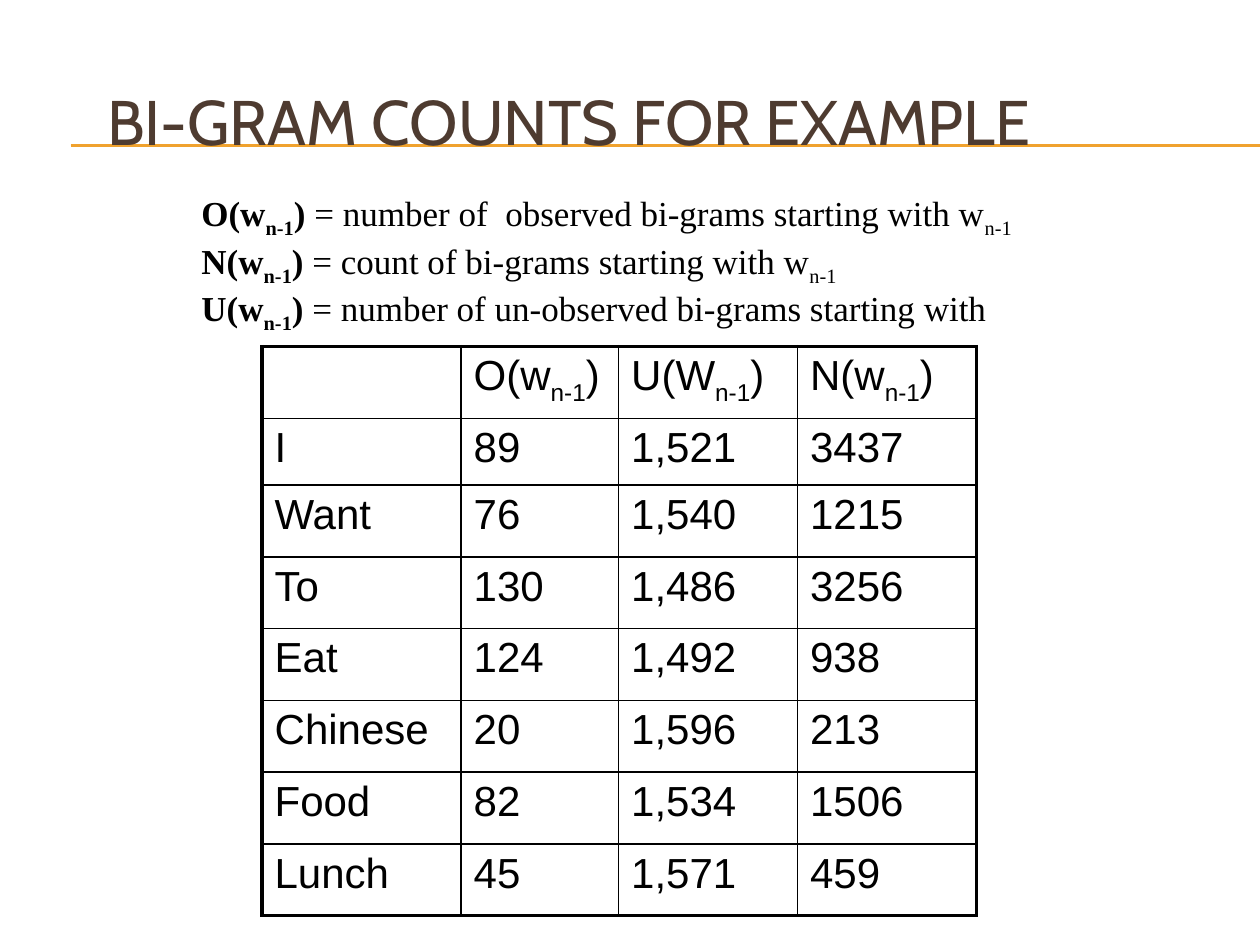
from lxml import etree
from pptx import Presentation
from pptx import util as u
from pptx.dml.color import RGBColor
from pptx.enum import text
from pptx.oxml.ns import qn

INK = {"gold": "F0A22E", "brown": "4E3B30", "black": "000000"}


class Deck:
    def __init__(self, wide, high):
        self.prs = Presentation()
        self.prs.slide_width = u.Inches(wide)
        self.prs.slide_height = u.Inches(high)
        self.slide = self.prs.slides.add_slide(self.prs.slide_layouts[5])

    def run(self, para, words, face, size, ink="black", bold=False, sub=False):
        run = para.add_run()
        run.text = words
        font = run.font
        font.name, font.size, font.bold = face, u.Pt(size), bold
        font.color.rgb = RGBColor.from_string(INK[ink])
        if sub:
            font._element.set("baseline", "-25000")

    def mix(self, para, words, face, size, bold=False):
        for i, part in enumerate(words.split("_")):
            if part:
                self.run(para, part, face, size, bold=bold, sub=i % 2 == 1)

    def title(self, words, box):
        shape = self.slide.shapes.title
        shape.left, shape.top, shape.width, shape.height = map(u.Inches, box)
        frame = shape.text_frame
        frame.vertical_anchor = text.MSO_ANCHOR.MIDDLE
        frame.auto_size = text.MSO_AUTO_SIZE.NONE
        para = frame.paragraphs[0]
        para.alignment = text.PP_ALIGN.LEFT
        self.run(para, words, "Cabin", 36, "brown")

    def line(self, left, top, right):
        ends = map(u.Inches, (left, top, right, top))
        rule = self.slide.shapes.add_connector(1, *ends)
        rule.line.color.rgb = RGBColor.from_string(INK["gold"])
        rule.line.width = u.Pt(0.75)
        etree.SubElement(rule._element.spPr, qn("a:effectLst"))
        tree = self.slide.shapes._spTree
        tree.remove(rule._element)
        tree.insert_element_before(rule._element, "p:sp")

    def notes(self, rows, box):
        shape = self.slide.shapes.add_textbox(*map(u.Inches, box))
        frame = shape.text_frame
        frame.word_wrap = False
        frame.auto_size = text.MSO_AUTO_SIZE.SHAPE_TO_FIT_TEXT
        for i, (term, rest) in enumerate(rows):
            para = frame.add_paragraph() if i else frame.paragraphs[0]
            self.mix(para, term, "Times New Roman", 20, True)
            self.mix(para, rest, "Times New Roman", 20)

    def edge(self, cell, side, width):
        props = cell._tc.get_or_add_tcPr()
        line = etree.SubElement(props, qn(f"a:ln{side}"), w=str(u.Pt(width)))
        fill = etree.SubElement(line, qn("a:solidFill"))
        etree.SubElement(fill, qn("a:srgbClr"), val=INK["black"])

    def table(self, rows, box, cols, highs):
        count, wide = len(rows), len(cols)
        frame = self.slide.shapes.add_table(count, wide, *map(u.Inches, box))
        grid = frame.table
        grid.first_row = grid.horz_banding = False
        for col, size in zip(grid.columns, cols):
            col.width = u.Inches(size)
        for row, size in zip(grid.rows, highs):
            row.height = u.Inches(size)
        for r, row in enumerate(rows):
            for c, words in enumerate(row):
                cell = grid.cell(r, c)
                outer = {"L": c == 0, "R": c == wide - 1,
                         "T": r == 0, "B": r == count - 1}
                for side, thick in outer.items():
                    self.edge(cell, side, 2.25 if thick else 1)
                cell.fill.background()
                para = cell.text_frame.paragraphs[0]
                para.font.size = u.Pt(24)
                self.mix(para, words, "Arial", 24)


def main():
    deck = Deck(10, 7.5)
    deck.title("BI-GRAM COUNTS FOR EXAMPLE", (0.75, 0.58, 8.5, 0.75))
    for top in (1.15, 1.16):
        deck.line(0.56, top, 10)
    deck.table([
        ("", "O(w_n-1_)", "U(W_n-1_)", "N(w_n-1_)"),
        ("I", "89", "1,521", "3437"),
        ("Want", "76", "1,540", "1215"),
        ("To", "130", "1,486", "3256"),
        ("Eat", "124", "1,492", "938"),
        ("Chinese", "20", "1,596", "213"),
        ("Food", "82", "1,534", "1506"),
        ("Lunch", "45", "1,571", "459"),
    ], (2.08, 2.75, 5.67, 4.5), (1.58, 1.25, 1.42, 1.42),
        [0.57, 0.53] + [0.57] * 6)
    deck.notes([
        ("O(w_n-1_)", " = number of  observed bi-grams starting with w_n-1"),
        ("N(w_n-1_)", " = count of bi-grams starting with w_n-1"),
        ("U(w_n-1_)", " = number of un-observed bi-grams starting with"),
    ], (1.5, 1.47, 6.74, 1.11))
    deck.prs.save("out.pptx")


if __name__ == "__main__":
    main()
